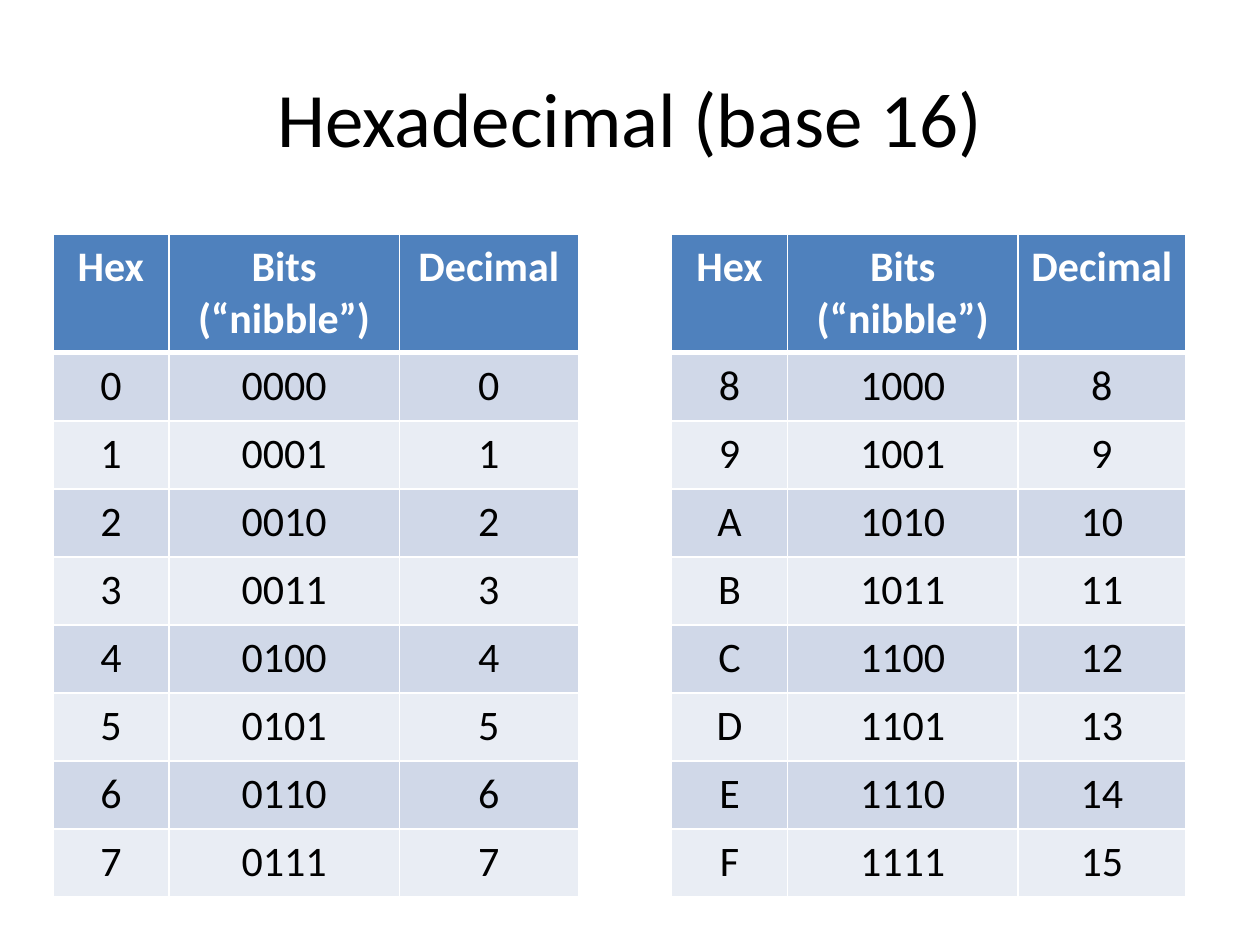
"""Build a slide listing hexadecimal digits with their bits and decimal values."""
from pptx import Presentation
from pptx.dml.color import RGBColor
from pptx.enum.text import MSO_ANCHOR, PP_ALIGN
from pptx.oxml import parse_xml
from pptx.oxml.ns import nsdecls
from pptx.util import Inches, Pt

BLACK = RGBColor(0x00, 0x00, 0x00)
WHITE = RGBColor(0xFF, 0xFF, 0xFF)
HEADER_BLUE = RGBColor(0x4F, 0x81, 0xBD)
BANDS = (RGBColor(0xE9, 0xED, 0xF4), RGBColor(0xD0, 0xD8, 0xE8))
HEADINGS = ("Hex", "Bits (“nibble”)", "Decimal")
HEADER_HEIGHT = 0.94
ROW_HEIGHT = 0.54
TABLE_TOP = 1.86


def write_text(frame, text, size=24, color=BLACK, bold=False):
    paragraph = frame.paragraphs[0]
    paragraph.alignment = PP_ALIGN.CENTER
    run = paragraph.add_run()
    run.text = text
    run.font.name = "Calibri"
    run.font.size = Pt(size)
    run.font.bold = bold
    run.font.color.rgb = color


def add_title(slide, text):
    title = slide.shapes.add_textbox(Inches(0.5), Inches(0.3), Inches(9), Inches(1.25))
    title.text_frame.word_wrap = True
    title.text_frame.vertical_anchor = MSO_ANCHOR.MIDDLE
    write_text(title.text_frame, text, size=44)


def set_borders(cell, **widths):
    properties = cell._tc.get_or_add_tcPr()
    for position, (side, width) in enumerate(widths.items()):
        border = parse_xml(
            f'<a:{side} {nsdecls("a")} w="{Pt(width)}"><a:solidFill>'
            f'<a:srgbClr val="{WHITE}"/></a:solidFill></a:{side}>'
        )
        properties.insert(position, border)


def fill_cell(cell, text, row):
    is_header = row == 0
    cell.fill.solid()
    cell.fill.fore_color.rgb = HEADER_BLUE if is_header else BANDS[row % 2]
    cell.margin_top = cell.margin_bottom = Inches(0.06)
    set_borders(cell, lnL=1, lnR=1, lnT=3 if row == 1 else 1, lnB=3 if is_header else 1)
    write_text(cell.text_frame, text, color=WHITE if is_header else BLACK, bold=is_header)


def add_digit_table(slide, left, widths, digits):
    rows = [HEADINGS] + [(f"{n:X}", f"{n:04b}", str(n)) for n in digits]
    height = HEADER_HEIGHT + ROW_HEIGHT * len(digits)
    table = slide.shapes.add_table(
        len(rows), len(widths),
        Inches(left), Inches(TABLE_TOP), Inches(sum(widths)), Inches(height),
    ).table
    for column, width in zip(table.columns, widths):
        column.width = Inches(width)
    for row, values in enumerate(rows):
        table.rows[row].height = Inches(ROW_HEIGHT if row else HEADER_HEIGHT)
        for column, value in enumerate(values):
            fill_cell(table.cell(row, column), value, row)


def main():
    presentation = Presentation()
    presentation.slide_width = Inches(10)
    presentation.slide_height = Inches(7.5)
    slide = presentation.slides.add_slide(presentation.slide_layouts[6])
    add_title(slide, "Hexadecimal (base 16)")
    add_digit_table(slide, 0.42, (0.92, 1.83, 1.42), range(8))
    add_digit_table(slide, 5.33, (0.92, 1.83, 1.33), range(8, 16))
    presentation.save("out.pptx")


if __name__ == "__main__":
    main()
